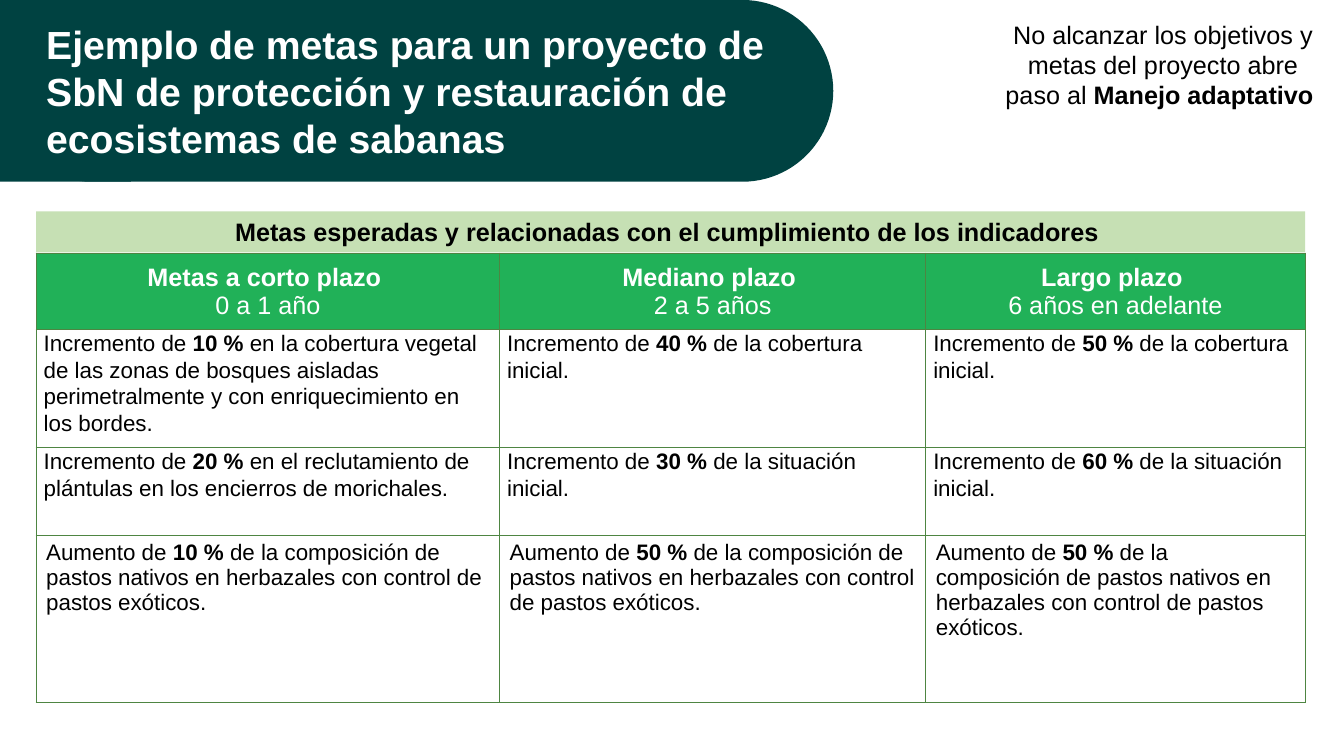
from lxml import etree
from pptx import Presentation
from pptx.dml.color import RGBColor
from pptx.enum import shapes, text
from pptx.oxml import ns
from pptx.util import Cm, Pt

FONT = "Arial"
BLACK = RGBColor(0x00, 0x00, 0x00)
WHITE = RGBColor(0xFF, 0xFF, 0xFF)
DARK_GREEN = RGBColor(0x00, 0x42, 0x41)
HEADER_GREEN = RGBColor(0x21, 0xB1, 0x58)
PALE_GREEN = RGBColor(0xC6, 0xE0, 0xB4)
BORDER_GREEN = RGBColor(0x4E, 0x85, 0x42)

LEFT, WIDTH = Cm(0.91), Cm(31.98)
COLUMN_WIDTHS = (11.68, 10.74, 9.56)
ROW_HEIGHTS = (1.93, 2.97, 2.21, 4.22)

# Bold passages stand between asterisks
TITLE = ("*Ejemplo de metas para un proyecto de SbN de protección y "
         "restauración de ecosistemas de sabanas*")
REMARK = "No alcanzar los objetivos y metas del proyecto abre paso al *Manejo adaptativo *"
BAND = "*Metas esperadas y relacionadas con el cumplimiento de los indicadores *"
PASTURE = "de la composición de pastos nativos en herbazales con control de pastos exóticos."
GOALS = [
    ["*Metas a corto plazo *\n0 a 1 año", "*Mediano plazo *\n2 a 5 años",
     "*Largo plazo *\n6 años en adelante"],
    ["Incremento de *10 %* en la cobertura vegetal de las zonas de bosques aisladas "
     "perimetralmente y con enriquecimiento en los bordes.",
     "Incremento de *40 %* de la cobertura inicial.",
     "Incremento de *50 %* de la cobertura inicial."],
    ["Incremento de *20 %* en el reclutamiento de plántulas en los encierros de morichales.",
     "Incremento de *30 % *de la situación inicial.",
     "Incremento de *60 %* de la situación inicial."],
    [f"Aumento de *{share} % *{PASTURE}" for share in (10, 50, 50)],
]


def write(frame, marked, size, color, align=text.PP_ALIGN.LEFT, spacing=None):
    """Fill a text frame, one paragraph a line, with bold between asterisks."""
    frame.word_wrap = True
    frame.text = marked.replace("*", "")
    for paragraph, line in zip(frame.paragraphs, marked.split("\n")):
        paragraph.alignment = align
        paragraph.line_spacing = spacing
        paragraph.text = ""
        for index, passage in enumerate(line.split("*")):
            if passage:
                run = paragraph.add_run()
                run.text = passage
                run.font.name, run.font.size = FONT, Pt(size)
                run.font.bold = index % 2 == 1
                run.font.color.rgb = color


def add_block(parent, kind, left, top, width, height, color):
    block = parent.add_shape(kind, left, top, width, height)
    block.shadow.inherit = False
    block.fill.solid()
    block.fill.fore_color.rgb = color
    block.line.fill.background()
    return block


def add_borders(cell):
    properties = cell._tc.get_or_add_tcPr()
    for position, side in enumerate(("lnL", "lnR", "lnT", "lnB")):
        border = etree.Element(ns.qn(f"a:{side}"), w=str(Pt(1)))
        fill = etree.SubElement(border, ns.qn("a:solidFill"))
        etree.SubElement(fill, ns.qn("a:srgbClr"), val=str(BORDER_GREEN))
        properties.insert(position, border)


def add_goals(slide):
    goals = slide.shapes.add_table(len(ROW_HEIGHTS), len(COLUMN_WIDTHS), LEFT, Cm(6.38),
                                   WIDTH, Cm(sum(ROW_HEIGHTS))).table
    goals.first_row = goals.horz_banding = False
    for column, width in zip(goals.columns, COLUMN_WIDTHS):
        column.width = Cm(width)
    for number, (row, height, entries) in enumerate(zip(goals.rows, ROW_HEIGHTS, GOALS)):
        row.height = Cm(height)
        for cell, entry in zip(row.cells, entries):
            if number == 0:
                cell.fill.solid()
                cell.fill.fore_color.rgb = HEADER_GREEN
                cell.vertical_anchor = text.MSO_ANCHOR.MIDDLE
                write(cell.text_frame, entry, 18, WHITE, text.PP_ALIGN.CENTER)
            else:
                cell.fill.background()
                tight = number < 3
                if tight:
                    cell.margin_left = cell.margin_right = Cm(0.19)
                    cell.margin_top = cell.margin_bottom = 0
                write(cell.text_frame, entry, 16, BLACK, spacing=1.07 if tight else None)
            add_borders(cell)


def add_title(slide):
    title = slide.shapes.title
    title.left, title.top, title.width, title.height = LEFT, Cm(0.38), Cm(18.64), Cm(3.84)
    title.text_frame.vertical_anchor = text.MSO_ANCHOR.TOP
    title.text_frame.auto_size = text.MSO_AUTO_SIZE.NONE
    write(title.text_frame, TITLE, 28, WHITE)
    # Bring the title in front of its banner
    slide.shapes._spTree.append(title._element)


def main():
    deck = Presentation()
    deck.slide_width, deck.slide_height = Cm(33.87), Cm(19.05)
    slide = deck.slides.add_slide(deck.slide_layouts[5])

    # Banner with a square left end and a round right end
    banner = slide.shapes.add_group_shape().shapes
    add_block(banner, shapes.MSO_SHAPE.RECTANGLE, 0, 0, Cm(3.3), Cm(4.58), DARK_GREEN)
    pill = add_block(banner, shapes.MSO_SHAPE.ROUNDED_RECTANGLE, 0, 0, Cm(21), Cm(4.58),
                     DARK_GREEN)
    pill.adjustments[0] = 0.5

    # Remark at the top right
    remark = slide.shapes.add_textbox(Cm(24.89), Cm(0.36), Cm(8.84), Cm(2.57))
    write(remark.text_frame, REMARK, 18, BLACK, text.PP_ALIGN.CENTER)

    # Goals by term, under their heading band
    add_goals(slide)
    band = add_block(slide.shapes, shapes.MSO_SHAPE.RECTANGLE, LEFT, Cm(5.33), WIDTH, Cm(1.03),
                     PALE_GREEN)
    write(band.text_frame, BAND, 18, BLACK, text.PP_ALIGN.CENTER)

    add_title(slide)
    deck.save("out.pptx")


if __name__ == "__main__":
    main()
